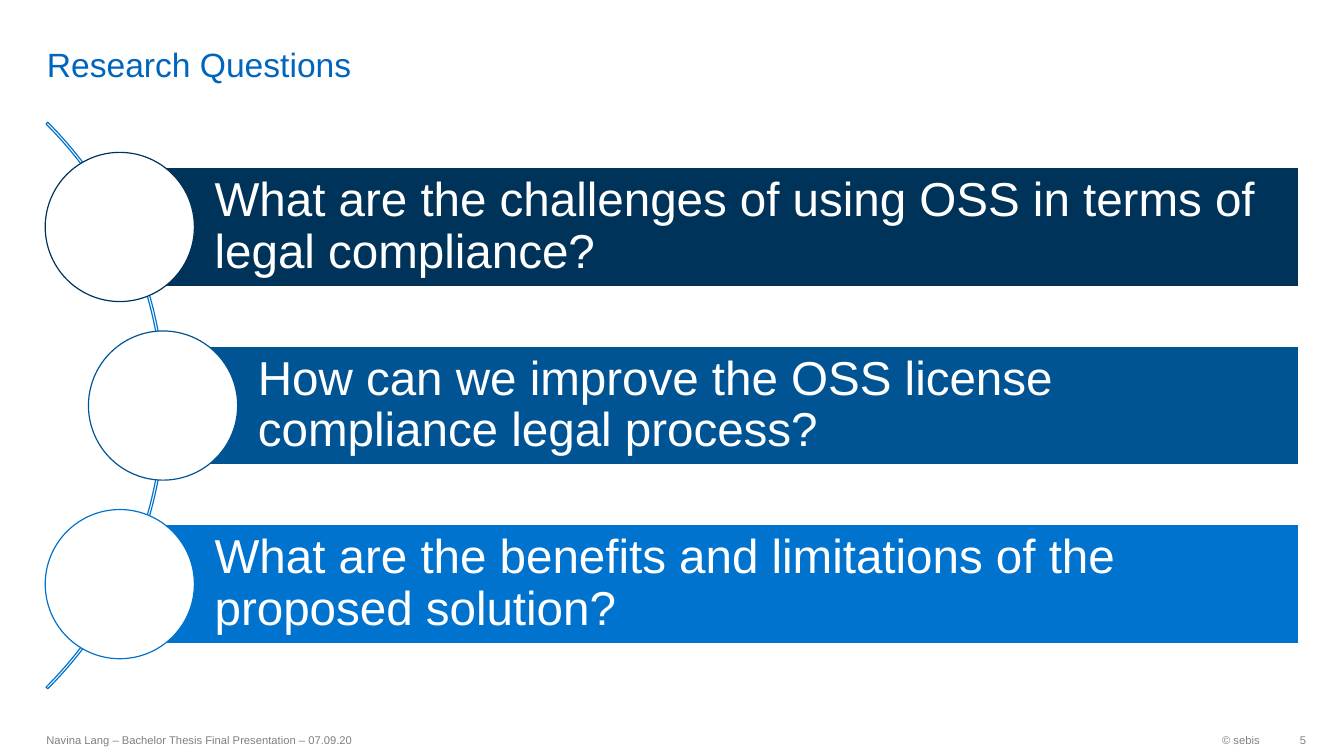
from dataclasses import dataclass

from pptx import Presentation
from pptx.dml.color import RGBColor
from pptx.enum.shapes import MSO_SHAPE as Shape
from pptx.enum.text import MSO_ANCHOR as Anchor, MSO_AUTO_SIZE as AutoSize, PP_ALIGN as Align
from pptx.util import Cm, Pt


@dataclass(frozen=True)
class Theme:
    font: str = "Arial"
    title_color: str = "0065BD"
    footer_color: str = "808080"
    white: str = "FFFFFF"
    arc_color: str = "0073CF"
    bar_colors: tuple = ("003359", "005494", "0073CF")
    title_size: int = 24
    question_size: int = 34
    footer_size: int = 8
    line_width: float = 0.85


THEME = Theme()
QUESTIONS = (
    "What are the challenges of using OSS in terms of legal compliance?",
    "How can we improve the OSS license compliance legal process?",
    "What are the benefits and limitations of the proposed solution?",
)


def write(shape, text, size, color, anchor=Anchor.MIDDLE, align=Align.LEFT,
          insets=(0.25, 0.13, 0.25, 0.13)):
    """Fill a shape with one paragraph; insets are left, top, right, bottom in cm."""
    frame = shape.text_frame
    frame.text = text
    frame.word_wrap = True
    frame.auto_size = AutoSize.NONE
    frame.vertical_anchor = anchor
    (frame.margin_left, frame.margin_top,
     frame.margin_right, frame.margin_bottom) = map(Cm, insets)
    paragraph = frame.paragraphs[0]
    paragraph.alignment = align
    paragraph.font.name = THEME.font
    paragraph.font.size = Pt(size)
    paragraph.font.color.rgb = RGBColor.from_string(color)
    return paragraph


def add_outlined(slide, kind, box, line, fill=None):
    shape = slide.shapes.add_shape(kind, *map(Cm, box))
    shape.shadow.inherit = False
    shape.line.color.rgb = RGBColor.from_string(line)
    shape.line.width = Pt(THEME.line_width)
    if fill:
        shape.fill.solid()
        shape.fill.fore_color.rgb = RGBColor.from_string(fill)
    else:
        shape.fill.background()
    return shape


def add_title(slide, text, left, top, width, height):
    title = slide.shapes.title
    title.left, title.top, title.width, title.height = map(Cm, (left, top, width, height))
    write(title, text, THEME.title_size, THEME.title_color, Anchor.BOTTOM,
          insets=(0.25, 0, 0.25, 0))


def add_questions(slide, left, top, width, height):
    """Stack question bars with circles that follow an arc along the left side."""
    bar_height, circle, pitch, bulge = 3, 3.76, 4.5, 1.09
    arc_size = 20.19
    middle = top + height / 2
    arc_right = left + circle / 2 + bulge + 0.05

    arc = add_outlined(slide, Shape.BLOCK_ARC,
                       (arc_right - arc_size, middle - arc_size / 2, arc_size, arc_size),
                       THEME.arc_color)
    # Angles from 315° to 45°, in 60000ths of a degree scaled by 100000
    for index, value in enumerate((189, 27, 0.003)):
        arc.adjustments[index] = value

    for row, (question, color) in enumerate(zip(QUESTIONS, THEME.bar_colors)):
        center_x = left + circle / 2 + (bulge if row == 1 else 0)
        center_y = middle + (row - 1) * pitch
        bar = add_outlined(slide, Shape.RECTANGLE,
                           (center_x, center_y - bar_height / 2,
                            left + width - center_x, bar_height),
                           THEME.white, color)
        paragraph = write(bar, question, THEME.question_size, THEME.white,
                          insets=(2.39, 0.22, 0.22, 0.22))
        paragraph.line_spacing = 0.9
        add_outlined(slide, Shape.OVAL,
                     (center_x - circle / 2, center_y - circle / 2, circle, circle),
                     color, THEME.white)


def add_footer(slide, left, top, width, height):
    number_width, owner_width = 0.92, 5.94
    number_left = left + width - number_width
    parts = (
        ("© sebis", number_left - owner_width, owner_width, Align.RIGHT, 0.25),
        ("Navina Lang – Bachelor Thesis Final Presentation – 07.09.20",
         left, 16, Align.LEFT, 0.25),
        ("5", number_left, number_width, Align.RIGHT, 0),
    )
    for text, part_left, part_width, align, right_inset in parts:
        part = slide.shapes.add_textbox(*map(Cm, (part_left, top, part_width, height)))
        write(part, text, THEME.footer_size, THEME.footer_color, align=align,
              insets=(0.25, 0.13, right_inset, 0.13))


def main():
    deck = Presentation()
    deck.slide_width, deck.slide_height = Cm(33.87), Cm(19.05)
    slide = deck.slides.add_slide(deck.slide_layouts[5])
    add_title(slide, "Research Questions", 0.93, 0.13, 29.42, 2)
    add_questions(slide, 1.14, 3.02, 31.6, 14.4)
    add_footer(slide, 0.92, 18.25, 32, 0.81)
    deck.save("out.pptx")


if __name__ == "__main__":
    main()
